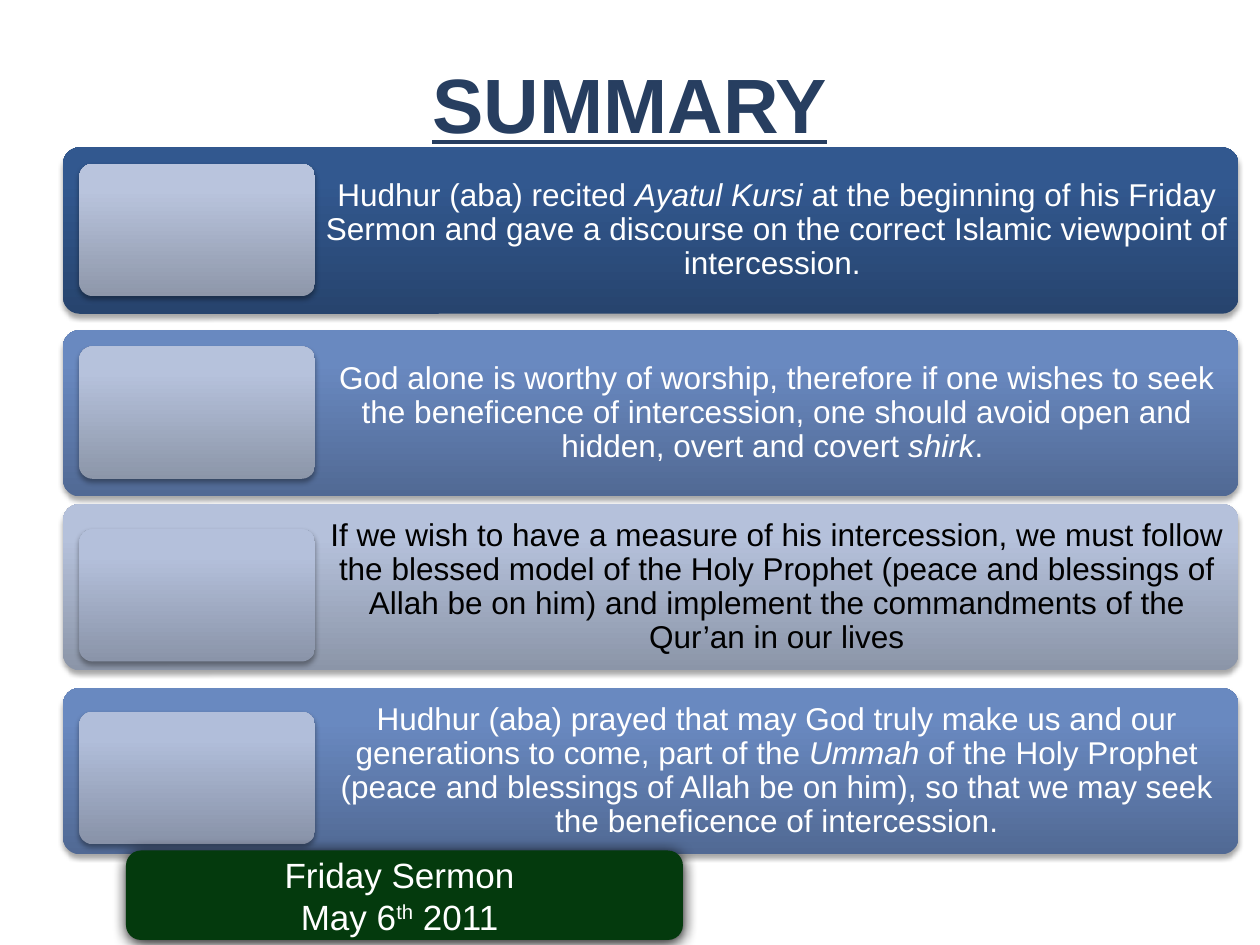
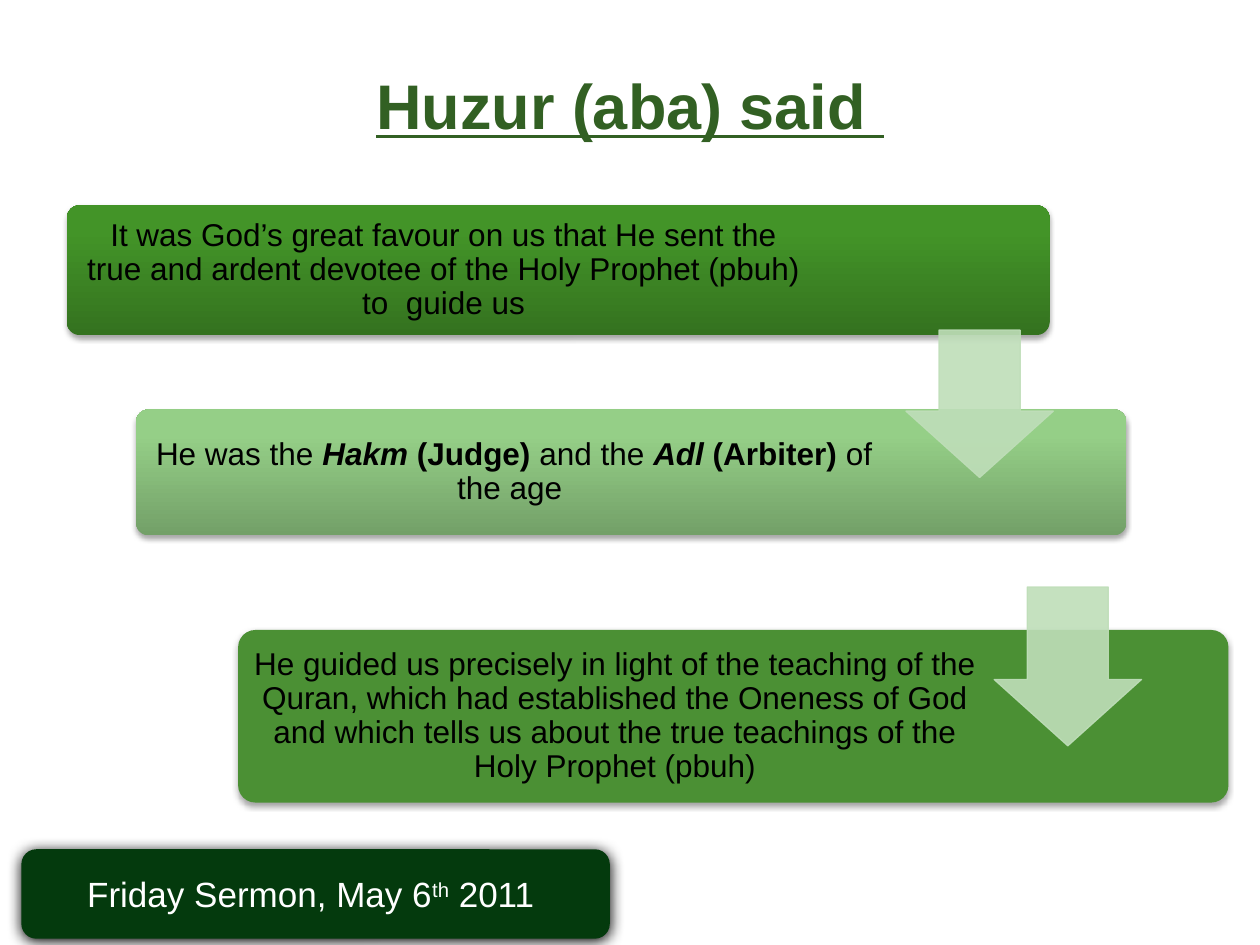
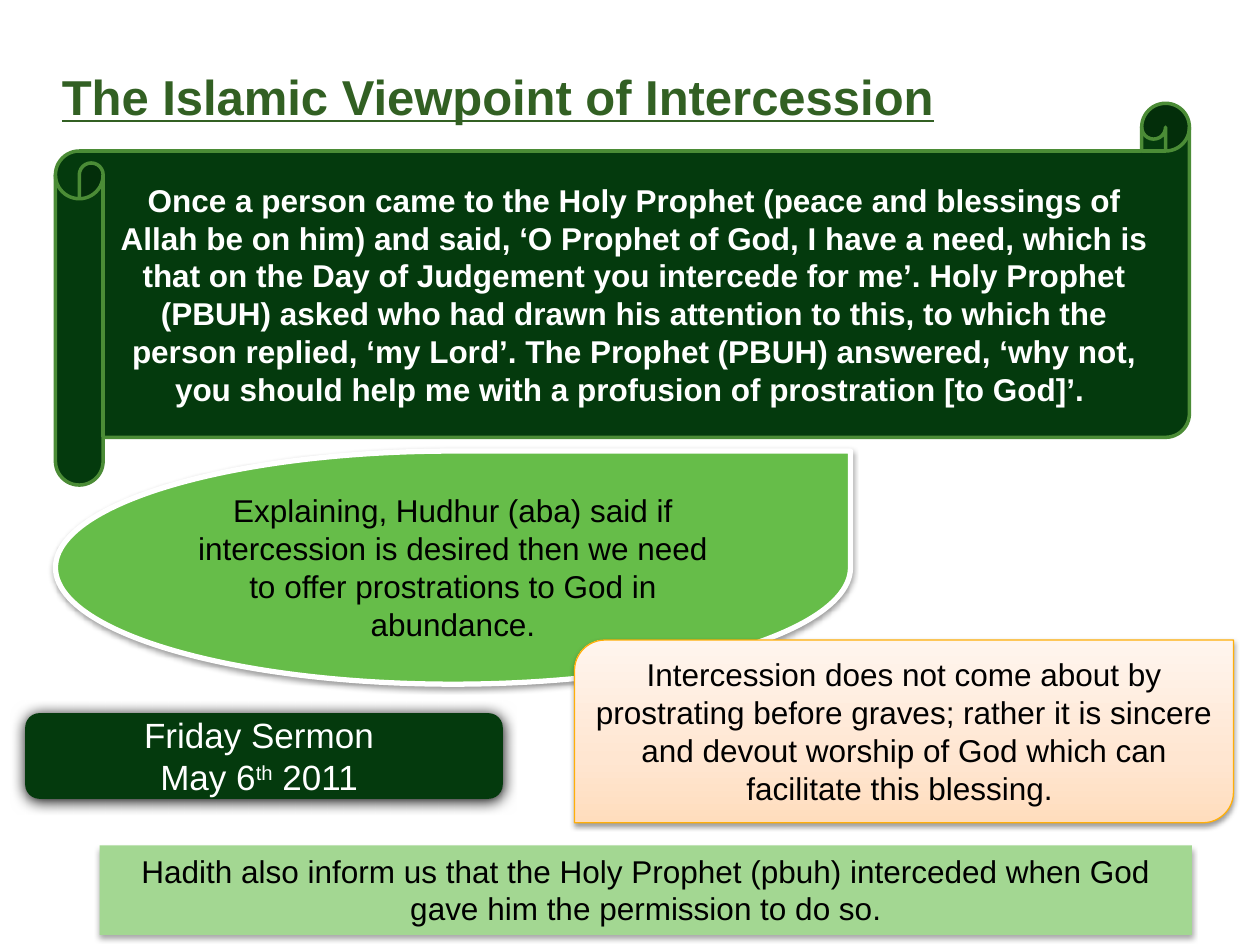
from lxml.etree import SubElement
from pptx import Presentation
from pptx.dml.color import RGBColor
from pptx.enum.shapes import MSO_SHAPE as SHAPE
from pptx.enum.text import MSO_ANCHOR as ANCHOR, MSO_AUTO_SIZE as AUTO_SIZE, PP_ALIGN as ALIGN
from pptx.oxml import parse_xml
from pptx.oxml.ns import nsdecls, qn
from pptx.util import Inches, Pt

COLORS = {
    "white": "FFFFFF", "black": "000000", "navy": "273E60", "forest": "326023",
    "footer": "043A0D", "scroll_edge": "4B8C36", "leaf": "66BD49", "moss": "4B9034",
    "mint": "A3D792", "arrow": "BFDEB9", "amber": "FFAF09",
}
GRADIENTS = {
    "navy": [(0, "27446E"), (80, "32588F"), (100, "315892")],
    "blue": [(0, "516994"), (80, "6989C0"), (100, "6889C2")],
    "pale": [(0, "8B95A8"), (80, "B5C1DB"), (100, "B5C2DC")],
    "tile_1": [(0, "8E97AA"), (80, "B9C4DD"), (100, "B9C5DF")],
    "tile_2": [(0, "8C96A9"), (80, "B6C2DC"), (100, "B6C3DE")],
    "tile_3": [(0, "8A94A9"), (80, "B4C0DB"), (100, "B4C1DD")],
    "tile_4": [(0, "8892A8"), (80, "B1BEDA"), (100, "B1BFDC")],
    "green": [(0, "34721F"), (80, "439428"), (100, "429726")],
    "light_green": [(0, "73A068"), (80, "95CF87"), (100, "95D286")],
    "peach": [(0, "FFDDBD"), (35, "FFE6D1"), (100, "FFF5EE")],
}
SOFT = (35, 3.1, 1.8)
MEDIUM = (38, 3.1, 1.6)
GLOW = (100, 8.5, 1)
FONT = "Arial"
DATE = [("May 6", ""), ("th", "^"), (" 2011 ", "")]

SUMMARY = [
    (1.17, "navy", "white", [
        ("Hudhur (aba) recited ", ""), ("Ayatul Kursi", "i"),
        (" at the beginning of his Friday Sermon and gave a discourse on the correct "
         "Islamic viewpoint of intercession. ", "")]),
    (2.62, "blue", "white", [
        ("God alone is worthy of worship, therefore if one wishes to seek the beneficence of "
         "intercession, one should avoid open and hidden, overt and covert ", ""),
        ("shirk", "i"), (". ", "")]),
    (4, "pale", "black", [
        ("If we wish to have a measure of his intercession, we must follow the blessed model of "
         "the Holy Prophet (peace and blessings of Allah be on him) and implement the "
         "commandments of the Qur’an in our lives", "")]),
    (5.46, "blue", "white", [
        ("Hudhur (aba) prayed that may God truly make us and our generations to come, part of "
         "the ", ""), ("Ummah", "i"),
        (" of the Holy Prophet (peace and blessings of Allah be on him), so that we may seek "
         "the beneficence of intercession.", "")]),
]
SAYINGS = [
    ((0.53, 1.63, 7.8, 1.03), "green", 5.92, [
        ("It was God’s great favour on us that He sent the true and ardent devotee of the Holy "
         "Prophet (pbuh) to  guide us", "")]),
    ((1.08, 3.25, 7.86, 1), "light_green", 5.94, [
        ("He was the ", ""), ("Hakm", "bi"), (" (Judge) ", "b"), ("and the ", ""),
        ("Adl", "bi"), (" (Arbiter) ", "b"), ("of the age ", "")]),
    ((1.89, 5, 7.86, 1.37), "moss", 5.92, [
        ("He guided us precisely in light of the teaching of the Quran, which had established "
         "the Oneness of God and which tells us about the true teachings of the Holy Prophet "
         "(pbuh)", "")]),
]
STORY = (
    "Once a person came to the Holy Prophet (peace and blessings of Allah be on him) and said, "
    "‘O Prophet of God, I have a need, which is that on the Day of Judgement you intercede for "
    "me’. Holy Prophet (PBUH) asked who had drawn his attention to this, to which the person "
    "replied, ‘my Lord’. The Prophet (PBUH) answered, ‘why not, you should help me with a "
    "profusion of prostration [to God]’. ")
EXPLANATION = ("Explaining, Hudhur (aba) said if intercession is desired then we need to offer "
               "prostrations to God in abundance.")
WARNING = ("Intercession does not come about by prostrating before graves; rather it is sincere "
           "and devout worship of God which can facilitate this blessing. ")
HADITH = ("Hadith also inform us that the Holy Prophet (pbuh) interceded when God gave him the "
          "permission to do so.")


def rgb(name):
    """Look up a named colour."""
    return RGBColor.from_string(COLORS[name])


def inches(box):
    """Convert a box in inches to lengths."""
    return [Inches(length) for length in box]


def write(frame, paragraphs, color, size=18, align=ALIGN.CENTER, spacing=None):
    """Fill a text frame; run marks are b, i, u and ^ for superscript."""
    frame.word_wrap = True
    for index, runs in enumerate(paragraphs):
        paragraph = frame.add_paragraph() if index else frame.paragraphs[0]
        paragraph.alignment = align
        paragraph.line_spacing = spacing
        for words, marks in runs:
            run = paragraph.add_run()
            run.text = words
            font = run.font
            font.name, font.size = FONT, Pt(size)
            font.color.rgb = rgb(color)
            font.bold, font.italic, font.underline = ("b" in marks, "i" in marks, "u" in marks)
            if "^" in marks:
                font._element.set("baseline", "30000")


def set_gradient(shape, stops):
    """Give a shape a gradient that runs from bottom to top."""
    properties = shape._element.spPr
    gradient = parse_xml(f'<a:gradFill {nsdecls("a")} rotWithShape="1"><a:gsLst/>'
                         '<a:lin ang="16200000" scaled="0"/></a:gradFill>')
    for position, color in stops:
        stop = SubElement(gradient[0], qn("a:gs"), pos=str(position * 1000))
        SubElement(stop, qn("a:srgbClr"), val=color)
    properties.find(qn("a:prstGeom")).addnext(gradient)


def set_shadow(shape, opacity, blur, distance):
    """Drop a black shadow straight below a shape."""
    effects = shape._element.spPr.find(qn("a:effectLst"))
    outer = SubElement(effects, qn("a:outerShdw"), blurRad=str(Pt(blur)), dist=str(Pt(distance)),
                       dir="5400000", algn="ctr", rotWithShape="0")
    color = SubElement(outer, qn("a:srgbClr"), val=COLORS["black"])
    SubElement(color, qn("a:alpha"), val=str(opacity * 1000))


def add_panel(slide, kind, box, fill, shadow=None, line=None, corner=None):
    """Add a preset shape with a named fill, an optional shadow and outline."""
    panel = slide.shapes.add_shape(kind, *inches(box))
    panel.shadow.inherit = False
    if corner is not None:
        panel.adjustments[0] = corner
    if fill in GRADIENTS:
        set_gradient(panel, GRADIENTS[fill])
    else:
        panel.fill.solid()
        panel.fill.fore_color.rgb = rgb(fill)
    if line:
        panel.line.color.rgb = rgb(line[0])
        panel.line.width = Pt(line[1])
    else:
        panel.line.fill.background()
    if shadow:
        set_shadow(panel, *shadow)
    return panel


def add_label(slide, box, runs, color):
    """Add the tightly spaced text that lies over a panel."""
    frame = slide.shapes.add_textbox(*inches(box)).text_frame
    frame.vertical_anchor = ANCHOR.MIDDLE
    frame.margin_left = frame.margin_right = Inches(0.07)
    frame.margin_top = frame.margin_bottom = Inches(0.07)
    write(frame, [runs], color, spacing=0.9)


def add_note(slide, kind, box, fill, words, shadow, line=None):
    """Add a shape whose black text starts at its top."""
    note = add_panel(slide, kind, box, fill, shadow, line)
    note.text_frame.vertical_anchor = ANCHOR.TOP
    write(note.text_frame, [[(words, "")]], "black")


def add_titled_slide(deck, title, box, size, color, align=ALIGN.CENTER, margins=(0, 0.03)):
    """Start a slide with an underlined bold title."""
    slide = deck.slides.add_slide(deck.slide_layouts[5])
    heading = slide.shapes.title
    heading.left, heading.top, heading.width, heading.height = inches(box)
    frame = heading.text_frame
    frame.auto_size = AUTO_SIZE.NONE
    frame.vertical_anchor = ANCHOR.TOP
    frame.margin_left = frame.margin_right = Inches(margins[0])
    frame.margin_top, frame.margin_bottom = Inches(margins[1]), 0
    write(frame, [[(title, "bu")]], color, size, align)
    return slide


def add_footer(slide, box, paragraphs):
    """Add the dark green sermon date plate."""
    plate = add_panel(slide, SHAPE.ROUNDED_RECTANGLE, box, "footer", GLOW)
    plate.text_frame.vertical_anchor = ANCHOR.MIDDLE
    write(plate.text_frame, paragraphs, "white", 20)


def add_arrow(slide, box):
    """Add a slightly transparent arrow leading to the next step."""
    arrow = add_panel(slide, SHAPE.DOWN_ARROW, box, "arrow", line=("arrow", 0.75))
    arrow.adjustments[0], arrow.adjustments[1] = 0.55, 0.45
    for color in arrow._element.spPr.iter(qn("a:srgbClr")):
        SubElement(color, qn("a:alpha"), val="90000")


def build_summary(deck):
    """Build the four summary rows, each with a tile at its left."""
    slide = add_titled_slide(deck, "SUMMARY", (0.5, 0.42, 9, 1), 44, "navy")
    left, width, height, tile_width = 0.5, 9.33, 1.32, 1.87
    text_left = left + 0.13 + tile_width
    for index, (top, fill, color, runs) in enumerate(SUMMARY):
        add_panel(slide, SHAPE.ROUNDED_RECTANGLE, (left, top, width, height), fill, SOFT,
                  corner=0.1)
        add_label(slide, (text_left, top, left + width - text_left, height), runs, color)
        tile = (left + 0.13, 1.3 + index * 1.45, tile_width, 1.05)
        add_panel(slide, SHAPE.ROUNDED_RECTANGLE, tile, f"tile_{index + 1}", SOFT, corner=0.1)
    add_footer(slide, (1, 6.75, 4.42, 0.71), [[("Friday Sermon ", "")], DATE])


def build_sayings(deck):
    """Build the three descending steps joined by arrows."""
    slide = add_titled_slide(deck, "Huzur (aba) said ", (0.5, 0.5, 9, 1), 36, "forest")
    for box, fill, text_width, runs in SAYINGS:
        left, top, _, height = box
        add_panel(slide, SHAPE.ROUNDED_RECTANGLE, box, fill, SOFT, corner=0.1)
        add_label(slide, (left + 0.03, top + 0.03, text_width, height - 0.06), runs, "black")
    for arrow_box in [(7.19, 2.62, 1.17, 1.17), (7.89, 4.66, 1.17, 1.26)]:
        add_arrow(slide, arrow_box)
    add_footer(slide, (0.17, 6.74, 4.67, 0.71), [[("Friday Sermon, ", ""), *DATE]])


def build_viewpoint(deck):
    """Build the scroll with the story and the notes that explain it."""
    slide = add_titled_slide(deck, "The Islamic Viewpoint of Intercession",
                             (0.39, 0.45, 8.11, 0.57), 28, "forest", ALIGN.LEFT, (0.1, 0.08))
    scroll = add_panel(slide, SHAPE.HORIZONTAL_SCROLL, (0.44, 0.82, 9, 3.03), "footer",
                       line=("scroll_edge", 2))
    scroll.text_frame.vertical_anchor = ANCHOR.MIDDLE
    write(scroll.text_frame, [[(STORY, "b")]], "white")
    add_note(slide, SHAPE.TEAR, (0.44, 3.58, 6.31, 1.85), "leaf", EXPLANATION, MEDIUM,
             ("white", 3))
    add_note(slide, SHAPE.ROUND_2_DIAG_RECTANGLE, (4.56, 5.08, 5.23, 1.45), "peach", WARNING,
             MEDIUM, ("amber", 0.75))
    add_note(slide, SHAPE.RECTANGLE, (0.79, 6.71, 8.67, 0.71), "mint", HADITH, SOFT)
    add_footer(slide, (0.2, 5.66, 3.79, 0.68), [[("Friday Sermon ", "")], DATE])


def main():
    """Build the deck and save it."""
    deck = Presentation()
    deck.slide_width, deck.slide_height = Inches(10), Inches(7.5)
    build_summary(deck)
    build_sayings(deck)
    build_viewpoint(deck)
    deck.save("out.pptx")


if __name__ == "__main__":
    main()
